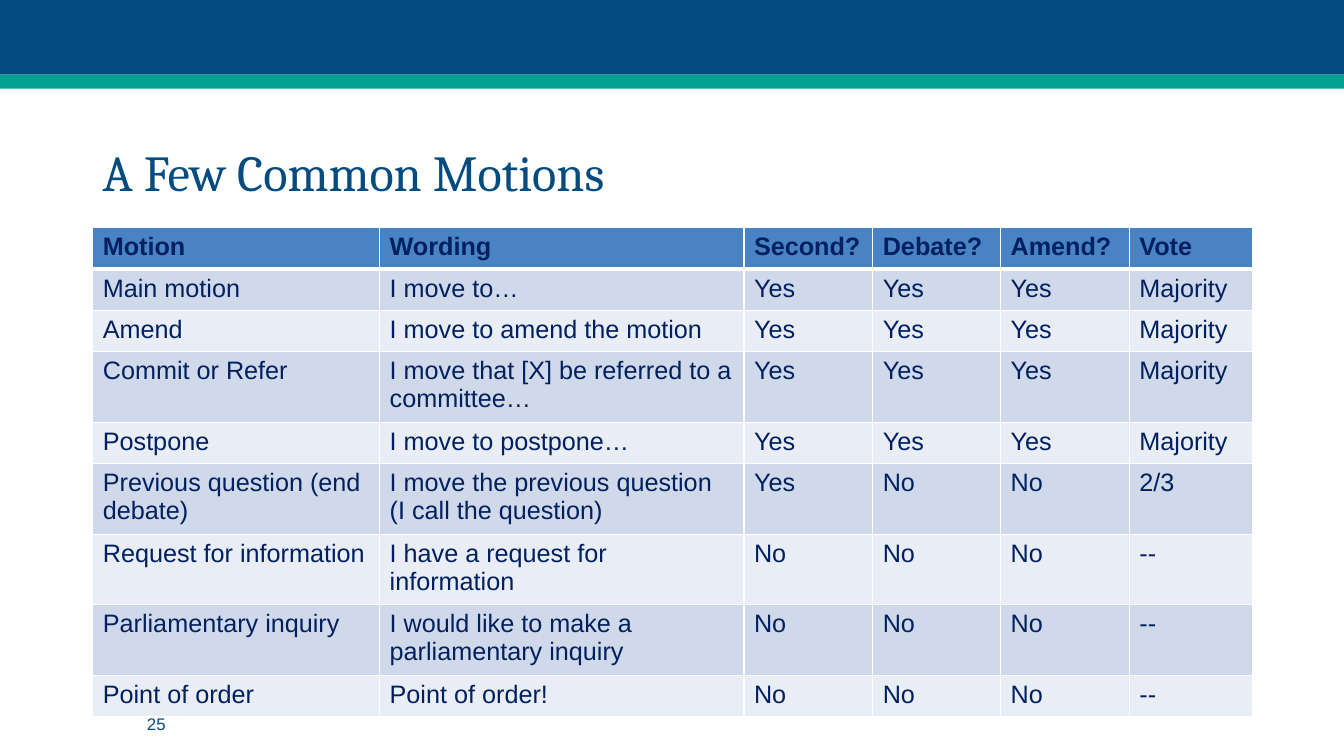
from lxml.etree import SubElement
from pptx import Presentation
from pptx.dml.color import RGBColor
from pptx.enum.shapes import MSO_SHAPE
from pptx.enum.text import MSO_ANCHOR
from pptx.oxml.ns import qn
from pptx.util import Inches, Pt

NAVY, TEAL, INK, WHITE = "044C7F", "04A193", "002060", "FFFFFF"
HEADER_FILL, BAND_FILLS = "4983C4", ("D0D9EA", "E9EDF5")
LEFT, WIDTH = 0.92, 11.5
ROW_HEIGHT = 0.41
COLUMN_WIDTHS = (2.85, 3.62, 1.28, 1.27, 1.28, 1.22)
MOTIONS = (
    ("Motion", "Wording", "Second?", "Debate?", "Amend?", "Vote"),
    ("Main motion", "I move to…", "Yes", "Yes", "Yes", "Majority"),
    ("Amend", "I move to amend the motion", "Yes", "Yes", "Yes", "Majority"),
    ("Commit or Refer", "I move that [X] be referred to a committee…",
     "Yes", "Yes", "Yes", "Majority"),
    ("Postpone", "I move to postpone…", "Yes", "Yes", "Yes", "Majority"),
    ("Previous question (end debate)",
     "I move the previous question (I call the question)", "Yes", "No", "No", "2/3"),
    ("Request for information", "I have a request for information",
     "No", "No", "No", "--"),
    ("Parliamentary inquiry", "I would like to make a parliamentary inquiry",
     "No", "No", "No", "--"),
    ("Point of order", "Point of order!", "No", "No", "No", "--"),
)


def color(hex_code):
    return RGBColor.from_string(hex_code)


def set_text(frame, text, font_name, size, hex_code, bold=False):
    frame.text = text
    font = frame.paragraphs[0].runs[0].font
    font.name, font.size, font.bold = font_name, Pt(size), bold
    font.color.rgb = color(hex_code)


def add_band(slide, left, top, width, height, hex_code):
    band = slide.shapes.add_shape(
        MSO_SHAPE.RECTANGLE, *map(Inches, (left, top, width, height)))
    band.shadow.inherit = False
    band.fill.solid()
    band.fill.fore_color.rgb = color(hex_code)
    band.line.fill.background()


def add_banner(slide, left, top, width, height):
    """Navy band with a teal strip along its lower edge."""
    strip = 0.14
    add_band(slide, left, top, width, height - strip, NAVY)
    add_band(slide, left, top + height - strip, width, strip, TEAL)


def add_label(slide, left, top, width, height, text, font_name, size, anchor):
    frame = slide.shapes.add_textbox(
        *map(Inches, (left, top, width, height))).text_frame
    frame.word_wrap = True
    frame.vertical_anchor = anchor
    set_text(frame, text, font_name, size, NAVY)
    frame.paragraphs[0].line_spacing = 0.9


def set_borders(cell, bottom_points):
    """White borders; they must precede the cell's fill in the XML."""
    properties = cell._tc.get_or_add_tcPr()
    for side, points in (("L", 1), ("R", 1), ("T", 1), ("B", bottom_points)):
        border = SubElement(properties, qn(f"a:ln{side}"), w=str(Pt(points)))
        fill = SubElement(border, qn("a:solidFill"))
        SubElement(fill, qn("a:srgbClr"), val=WHITE)


def add_motions_table(slide, left, top, width):
    table = slide.shapes.add_table(
        len(MOTIONS), len(COLUMN_WIDTHS), Inches(left), Inches(top),
        Inches(width), Inches(ROW_HEIGHT * len(MOTIONS))).table
    for column, share in zip(table.columns, COLUMN_WIDTHS):
        column.width = Inches(width * share / sum(COLUMN_WIDTHS))
    for r, motion in enumerate(MOTIONS):
        table.rows[r].height = Inches(ROW_HEIGHT)
        is_header = r == 0
        for c, entry in enumerate(motion):
            cell = table.cell(r, c)
            set_text(cell.text_frame, entry, "Arial", 18, INK, is_header)
            set_borders(cell, 3 if is_header else 1)
            cell.fill.solid()
            cell.fill.fore_color.rgb = color(
                HEADER_FILL if is_header else BAND_FILLS[(r - 1) % 2])


def main():
    deck = Presentation()
    deck.slide_width, deck.slide_height = Inches(13.33), Inches(7.5)
    slide = deck.slides.add_slide(deck.slide_layouts[6])
    add_banner(slide, 0, 0, 13.33, 0.88)
    add_label(slide, LEFT, 0.81, WIDTH, 1.25, "A Few Common Motions",
              "Cambria", 36, MSO_ANCHOR.BOTTOM)
    add_motions_table(slide, LEFT, 2.26, WIDTH)
    add_label(slide, 1.36, 7.07, 0.9, 0.25, "25", "Arial", 12, MSO_ANCHOR.MIDDLE)
    deck.save("out.pptx")


if __name__ == "__main__":
    main()
